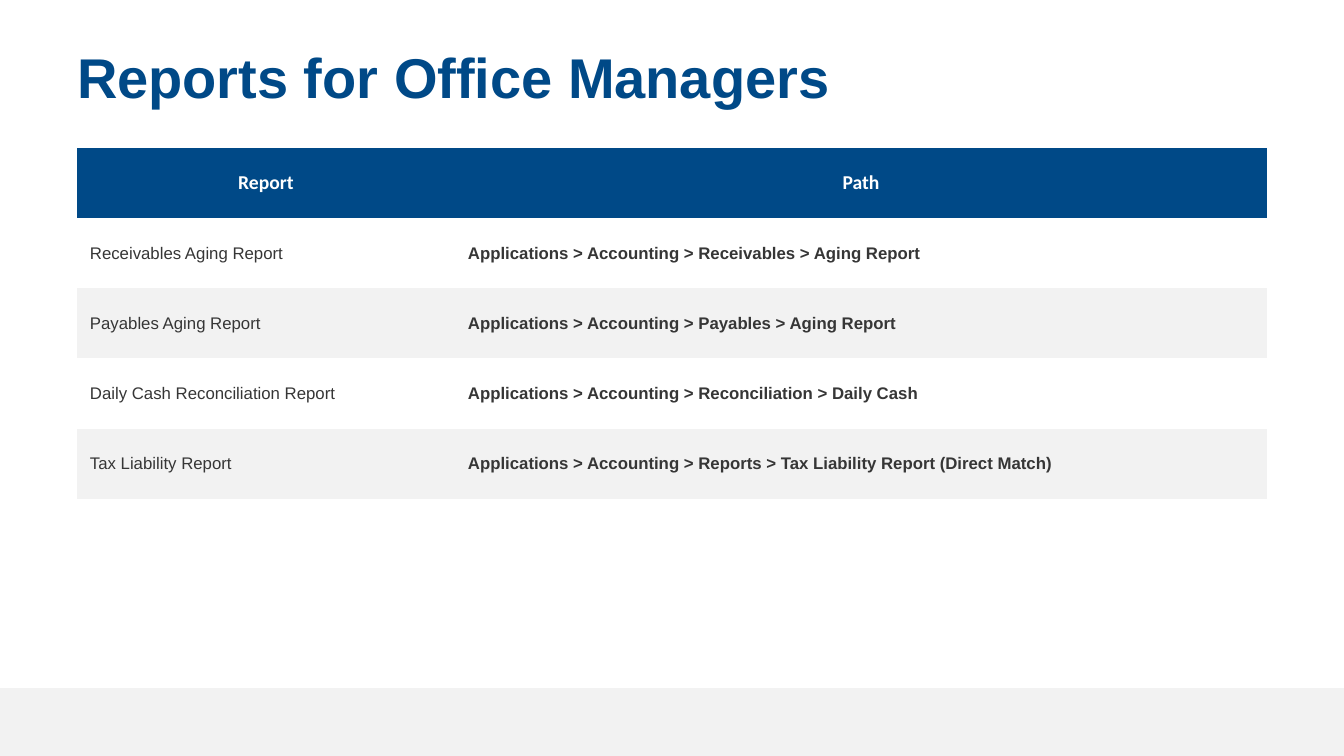
"""Build the slide listing reports for office managers."""
from pptx import Presentation
from pptx import util as u
from pptx.dml.color import RGBColor
from pptx.enum import shapes, text

TITLE = "Reports for Office Managers"
ROWS = [
    ("Report", "Path"),
    ("Receivables Aging Report", "Applications > Accounting > Receivables > Aging Report"),
    ("Payables Aging Report", "Applications > Accounting > Payables > Aging Report"),
    ("Daily Cash Reconciliation Report", "Applications > Accounting > Reconciliation > Daily Cash"),
    ("Tax Liability Report",
     "Applications > Accounting > Reports > Tax Liability Report (Direct Match)"),
]
COLUMNS = (378, 812)
TABLE_LEFT, TABLE_TOP, TABLE_HEIGHT = 77, 148, 351
WIDTH, HEIGHT, FOOTER = 1344, 756, 68
BLUE, GREY, WHITE, INK = "004987", "F2F2F2", "FFFFFF", "363636"
NO_STYLE = "{2D5ABB26-0587-4C30-8999-92F81FD0307C}"


def px(n):
    return u.Emu(round(n * 914400 / 100.8))


def paint(fill, color):
    fill.solid()
    fill.fore_color.rgb = RGBColor.from_string(color)


def style(p, name, size, color, bold):
    f = p.font
    f.name, f.size, f.bold = name, u.Pt(size), bold
    f.color.rgb = RGBColor.from_string(color)


def add_footer(s):
    sp = s.shapes.add_shape(shapes.MSO_SHAPE.RECTANGLE, 0, px(HEIGHT - FOOTER),
                            px(WIDTH), px(FOOTER))
    sp.shadow.inherit = False
    paint(sp.fill, GREY)
    sp.line.fill.background()


def add_title(s):
    sp = s.shapes.title
    sp.left, sp.top, sp.width, sp.height = map(px, (67, 40, 1221, 108))
    tf = sp.text_frame
    tf.text = TITLE
    tf.word_wrap = True
    tf.auto_size = text.MSO_AUTO_SIZE.NONE
    tf.vertical_anchor = text.MSO_ANCHOR.TOP
    p = tf.paragraphs[0]
    p.alignment = text.PP_ALIGN.LEFT
    p.line_spacing = u.Pt(46)
    style(p, "Arial", 40, BLUE, True)


def add_reports(s):
    table = s.shapes.add_table(len(ROWS), len(COLUMNS), px(TABLE_LEFT), px(TABLE_TOP),
                               px(sum(COLUMNS)), px(TABLE_HEIGHT)).table
    table._tbl.tblPr[0].text = NO_STYLE
    table.horz_banding = False
    for column, width in zip(table.columns, COLUMNS):
        column.width = px(width)
    for i, row in enumerate(ROWS):
        table.rows[i].height = px(TABLE_HEIGHT / len(ROWS))
        for j, words in enumerate(row):
            cell = table.cell(i, j)
            cell.text = words
            cell.vertical_anchor = text.MSO_ANCHOR.MIDDLE
            cell.margin_left = cell.margin_right = px(13)
            cell.margin_top = cell.margin_bottom = px(5)
            p = cell.text_frame.paragraphs[0]
            if i == 0:
                paint(cell.fill, BLUE)
                p.alignment = text.PP_ALIGN.CENTER
                style(p, "Calibri", 14, WHITE, True)
            else:
                paint(cell.fill, WHITE if i % 2 else GREY)
                style(p, "Arial", 12, INK, j == 1)


def main():
    prs = Presentation()
    prs.slide_width, prs.slide_height = px(WIDTH), px(HEIGHT)
    s = prs.slides.add_slide(prs.slide_layouts[5])
    paint(s.background.fill, WHITE)
    add_footer(s)
    add_title(s)
    add_reports(s)
    prs.save("out.pptx")


if __name__ == "__main__":
    main()
